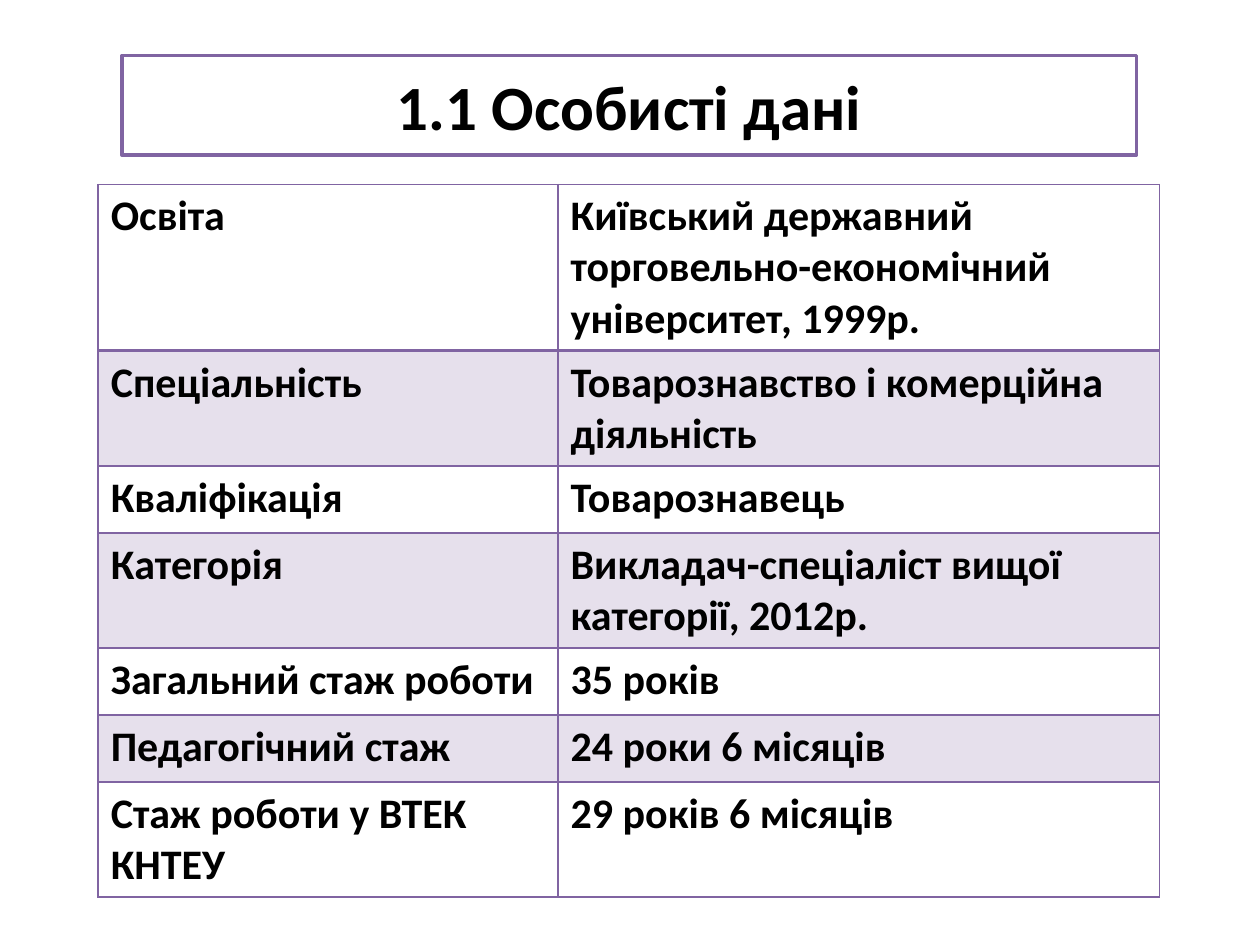
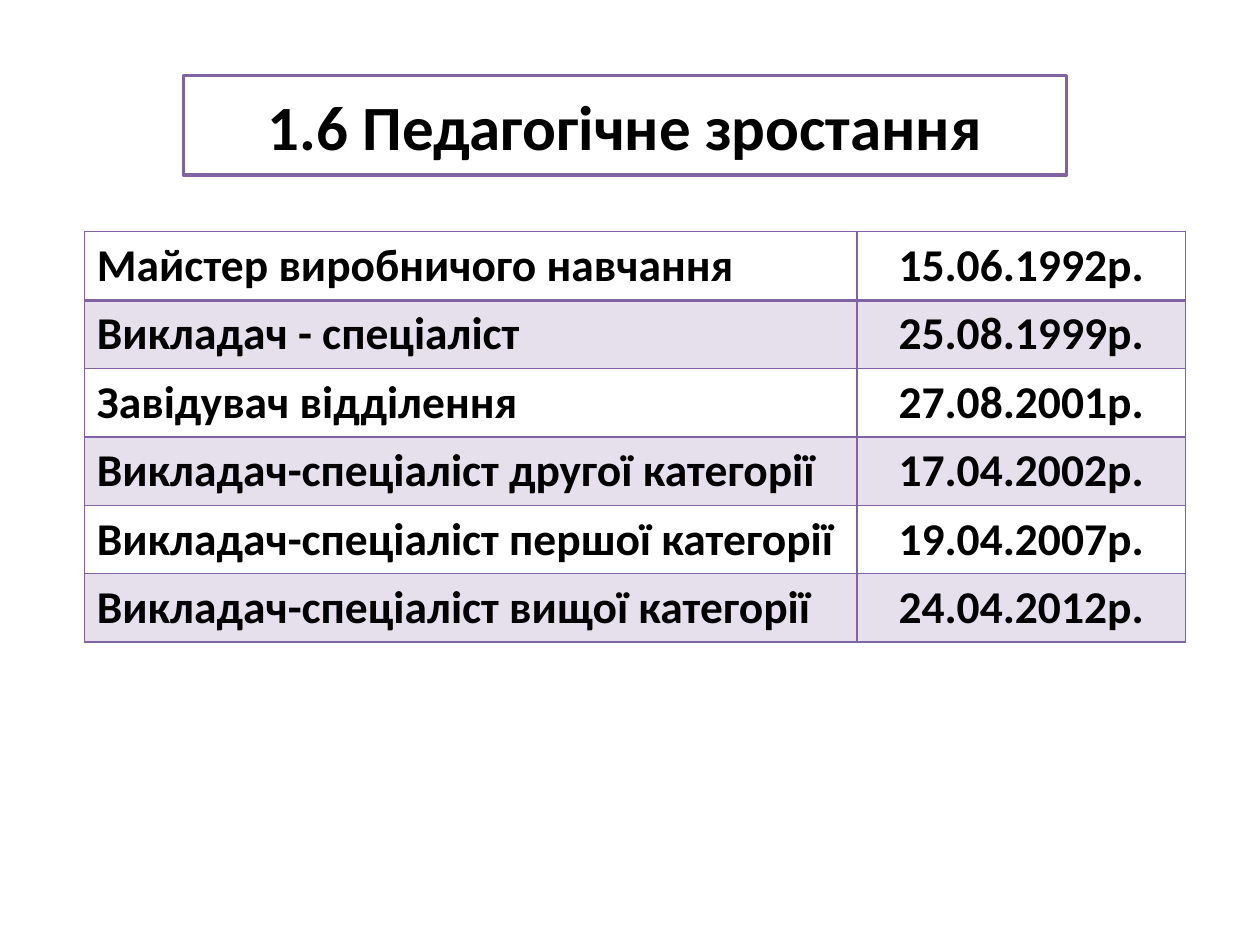
from lxml import etree
from pptx import Presentation
from pptx.dml.color import RGBColor
from pptx.enum.shapes import MSO_SHAPE
from pptx.enum.text import MSO_ANCHOR, PP_ALIGN
from pptx.oxml.ns import qn
from pptx.util import Cm, Pt

RECTANGLE = MSO_SHAPE.RECTANGLE
MIDDLE = MSO_ANCHOR.MIDDLE
LEFT, CENTER = PP_ALIGN.LEFT, PP_ALIGN.CENTER

COLORS = {"accent": "8064A2", "band": "E6E0EC", "paper": "FFFFFF", "ink": "000000"}
FONT = "Calibri"
THIN, THICK = 1, 2
BLANK_LAYOUT = 6

PERSONAL_DATA = [
    ("Освіта", "Київський державний торговельно-економічний університет, 1999р."),
    ("Спеціальність", "Товарознавство і комерційна діяльність"),
    ("Кваліфікація", "Товарознавець"),
    ("Категорія", "Викладач-спеціаліст вищої категорії, 2012р."),
    ("Загальний стаж роботи", "35 років"),
    ("Педагогічний стаж", "24 роки 6 місяців"),
    ("Стаж роботи у ВТЕК КНТЕУ", "29 років 6 місяців"),
]
PERSONAL_LINES = [3, 2, 1, 2, 1, 1, 2]
CAREER_STEPS = [
    ("Майстер виробничого навчання", "15.06.1992р."),
    ("Викладач - спеціаліст", "25.08.1999р."),
    ("Завідувач відділення", "27.08.2001р."),
    ("Викладач-спеціаліст другої категорії", "17.04.2002р."),
    ("Викладач-спеціаліст першої категорії", "19.04.2007р."),
    ("Викладач-спеціаліст вищої категорії", "24.04.2012р."),
]


def color(key):
    return RGBColor.from_string(COLORS[key])


def write(frame, text, size, align=LEFT):
    frame.word_wrap = True
    paragraph = frame.paragraphs[0]
    paragraph.alignment = align
    run = paragraph.add_run()
    run.text = text
    run.font.name = FONT
    run.font.size = Pt(size)
    run.font.bold = True
    run.font.color.rgb = color("ink")


def add_title(slide, box, text):
    banner = slide.shapes.add_shape(RECTANGLE, *map(Cm, box))
    banner.shadow.inherit = False
    banner.fill.solid()
    banner.fill.fore_color.rgb = color("paper")
    banner.line.color.rgb = color("accent")
    banner.line.width = Pt(2)
    banner.text_frame.vertical_anchor = MIDDLE
    write(banner.text_frame, text, 36, CENTER)


def set_borders(cell, widths):
    properties = cell._tc.get_or_add_tcPr()
    for side, width in widths.items():
        border = etree.SubElement(properties, qn(f"a:ln{side}"), w=str(Pt(width)))
        fill = etree.SubElement(border, qn("a:solidFill"))
        etree.SubElement(fill, qn("a:srgbClr"), val=COLORS["accent"])


def add_facts(slide, box, rows, column_widths, row_heights, size, value_align=LEFT):
    frame = slide.shapes.add_table(len(rows), len(column_widths), *map(Cm, box))
    facts = frame.table
    facts.first_row = False
    facts.horz_banding = False
    for column, width in zip(facts.columns, column_widths):
        column.width = Cm(width)
    for index, (texts, height) in enumerate(zip(rows, row_heights)):
        facts.rows[index].height = Cm(height)
        widths = {
            "L": THIN,
            "R": THIN,
            "T": THICK if index == 1 else THIN,
            "B": THICK if index == 0 else THIN,
        }
        for cell, text, align in zip(facts.rows[index].cells, texts, (LEFT, value_align)):
            set_borders(cell, widths)
            if index % 2:
                cell.fill.solid()
                cell.fill.fore_color.rgb = color("band")
            else:
                cell.fill.background()
            write(cell.text_frame, text, size, align)


def personal_data_slide(slide):
    add_title(slide, (2.46, 1.12, 20.45, 2.01), "1.1 Особисті дані")
    heights = [1.35 if lines == 1 else 0.25 + 1.03 * lines for lines in PERSONAL_LINES]
    add_facts(slide, (1.98, 3.72, 21.4, sum(heights)), PERSONAL_DATA,
              (9.27, 12.12), heights, 24)


def career_slide(slide):
    add_title(slide, (3.7, 1.52, 17.8, 2.01), "1.6 Педагогічне зростання")
    heights = [1.38] * len(CAREER_STEPS)
    add_facts(slide, (1.7, 4.67, 22.2, sum(heights)), CAREER_STEPS,
              (15.58, 6.62), heights, 26, CENTER)


def main():
    deck = Presentation()
    deck.slide_width = Cm(25.4)
    deck.slide_height = Cm(19.05)
    for build in (personal_data_slide, career_slide):
        build(deck.slides.add_slide(deck.slide_layouts[BLANK_LAYOUT]))
    deck.save("out.pptx")


if __name__ == "__main__":
    main()
